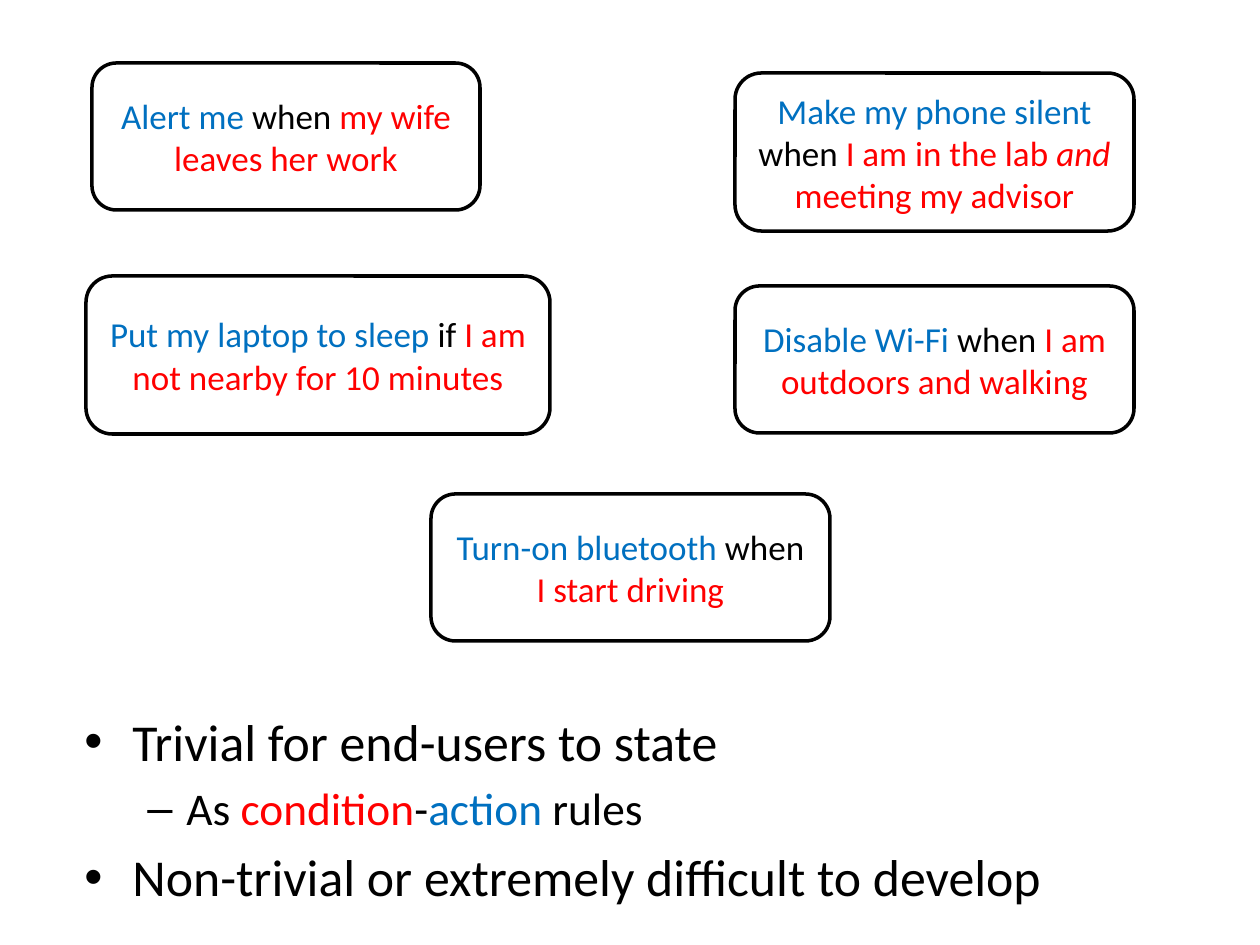
import pptx
import pptx.util
import pptx.dml.color
import pptx.enum.shapes
import pptx.enum.text
import pptx.oxml.ns
import lxml.etree

THEME = {
    "font": "Calibri",
    "plain": "000000",
    "action": "0070C0",
    "condition": "FF0000",
    "both": "FF0000",
    "fill": "FFFFFF",
    "line": "000000",
    "line_pt": 2,
    "rule_pt": 20,
}
RULES = [
    ((92, 63, 388, 147), [("Alert me ", "action"), ("when ", "plain"),
                          ("my wife leaves her work", "condition")]),
    ((735, 73, 399, 158), [("Make my phone silent ", "action"), ("when ", "plain"),
                           ("I am in the lab ", "condition"), ("and", "both"),
                           (" meeting my advisor", "condition")]),
    ((86, 276, 464, 158), [("Put my laptop to sleep ", "action"), ("if ", "plain"),
                           ("I am not nearby for 10 minutes", "condition")]),
    ((735, 286, 399, 147), [("Disable Wi-Fi ", "action"), ("when ", "plain"),
                            ("I am outdoors and walking", "condition")]),
    ((431, 494, 399, 147), [("Turn-on bluetooth ", "action"), ("when ", "plain"),
                            ("I start driving", "condition")]),
]
BODY_BOX = (72, 703, 1134, 210)
BODY = [
    (0, [("Trivial for end-users to state", "plain")]),
    (1, [("As ", "plain"), ("condition", "condition"), ("-", "plain"),
         ("action", "action"), (" rules", "plain")]),
    (0, [("Non-trivial or extremely difficult to develop", "plain")]),
]
LEVELS = [
    {"pt": 29.6, "margin": 48, "hang": 48, "bullet": "•"},
    {"pt": 25.9, "margin": 102, "hang": 39, "bullet": "–"},
]
SPACE_RATIO = 0.2


def px(n):
    return round(n * 914400 / 126)


def rgb(key):
    return pptx.dml.color.RGBColor.from_string(THEME[key])


def add_runs(p, runs, pt):
    for text, role in runs:
        r = p.add_run()
        r.text = text
        fmt = {"name": THEME["font"], "size": pptx.util.Pt(pt), "italic": role == "both"}
        for key, value in fmt.items():
            setattr(r.font, key, value)
        r.font.color.rgb = rgb(role)


def add_bullet(p, level):
    pPr = p._p.get_or_add_pPr()
    pPr.set("marL", str(px(level["margin"])))
    pPr.set("indent", str(-px(level["hang"])))
    for tag, key, value in (("a:buFont", "typeface", "Arial"),
                            ("a:buChar", "char", level["bullet"])):
        lxml.etree.SubElement(pPr, pptx.oxml.ns.qn(tag)).set(key, value)


def add_rule(s, box, runs):
    sp = s.shapes.add_shape(pptx.enum.shapes.MSO_SHAPE.ROUNDED_RECTANGLE, *map(px, box))
    sp.shadow.inherit = False
    sp.fill.solid()
    sp.fill.fore_color.rgb = rgb("fill")
    sp.line.color.rgb = rgb("line")
    sp.line.width = pptx.util.Pt(THEME["line_pt"])
    tf = sp.text_frame
    tf.word_wrap = True
    tf.vertical_anchor = pptx.enum.text.MSO_ANCHOR.MIDDLE
    p = tf.paragraphs[0]
    p.alignment = pptx.enum.text.PP_ALIGN.CENTER
    add_runs(p, runs, THEME["rule_pt"])


def add_body(s):
    tf = s.shapes.add_textbox(*map(px, BODY_BOX)).text_frame
    tf.word_wrap = True
    for i, (depth, runs) in enumerate(BODY):
        p = tf.add_paragraph() if i else tf.paragraphs[0]
        level = LEVELS[depth]
        p.level = depth
        p.space_before = pptx.util.Pt(round(level["pt"] * SPACE_RATIO, 1))
        add_bullet(p, level)
        add_runs(p, runs, level["pt"])


def main():
    prs = pptx.Presentation()
    prs.slide_width, prs.slide_height = px(1260), px(945)
    s = prs.slides.add_slide(prs.slide_layouts[6])
    add_body(s)
    for box, runs in RULES:
        add_rule(s, box, runs)
    prs.save("out.pptx")


if __name__ == "__main__":
    main()
